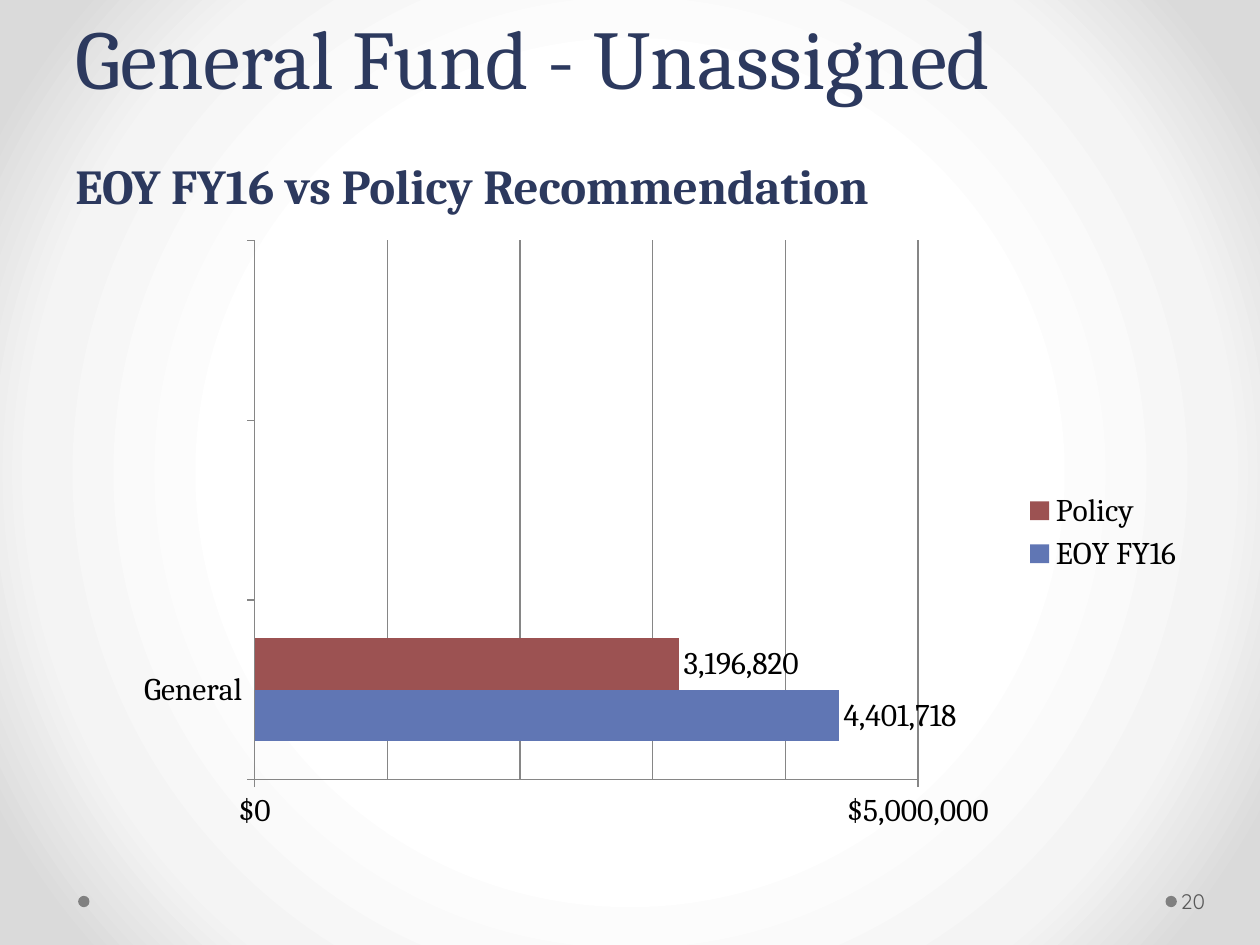
"""Build the General Fund slide: title, bar chart and page number."""
from copy import deepcopy
from pptx import Presentation
from pptx.chart.data import CategoryChartData as Data
from pptx.dml.color import RGBColor as Rgb
from pptx.enum.chart import XL_CHART_TYPE as Kind, XL_LABEL_POSITION as Spot
from pptx.enum.chart import XL_LEGEND_POSITION as Side, XL_TICK_MARK as Tick
from pptx.enum.shapes import MSO_SHAPE as Form
from pptx.enum.text import MSO_ANCHOR as Anchor
from pptx.oxml import parse_xml
from pptx.oxml.ns import nsdecls, qn
from pptx.util import Inches, Pt

SERIF = "Cambria"
NAVY, GRAY, LINE = "2C395E", "808080", "868686"
TITLE = [
    ("General Fund - Unassigned", dict(size=Pt(47.7), bold=False)),
    ("EOY FY16 vs Policy Recommendation", dict(size=Pt(27.9), bold=True)),
]
PAGE = "20"
CATS = ["General", "", ""]
BARS = [("EOY FY16", 4401718, "6076B4"), ("Policy ", 3196820, "9C5252")]
STOPS = [(50, "FFFFFF"), (76, "F4F4F4"), (92, "DADADA")]
PLOT = dict(x=0.169, y=0.032, w=0.585, h=0.865)
DOTS = [0.62, 9.25]
AXIS = dict(minimum_scale=0, maximum_scale=5000000, major_unit=5000000,
            minor_unit=1000000, has_major_gridlines=True,
            has_minor_gridlines=True)


def paint(fill, hue):
    fill.solid()
    fill.fore_color.rgb = Rgb.from_string(hue)


def style(item, **vals):
    for key, val in vals.items():
        setattr(item, key, val)


def ink(font, hue, **vals):
    style(font, **vals)
    paint(font.fill, hue)


def rule(line):
    line.width = Pt(0.75)
    paint(line.fill, LINE)


def box(slide, area, anchor, pads):
    frame = slide.shapes.add_textbox(*map(Inches, area)).text_frame
    style(frame, word_wrap=True, vertical_anchor=anchor)
    for side, pad in zip(("left", "top", "right", "bottom"), pads):
        setattr(frame, f"margin_{side}", Inches(pad))
    return frame.paragraphs[0]


def glow(slide):
    fill = slide.background.fill
    fill.gradient()
    stops = "".join(f'<a:gs pos="{pos * 1000}"><a:srgbClr val="{hue}"/></a:gs>'
                    for pos, hue in STOPS)
    grad = parse_xml(
        f'<a:gradFill {nsdecls("a")} rotWithShape="1"><a:gsLst>{stops}</a:gsLst>'
        '<a:path path="circle"><a:fillToRect l="50000" t="50000" r="50000" '
        'b="50000"/></a:path></a:gradFill>')
    old = slide.background._cSld.bg.bgPr.find(qn("a:gradFill"))
    old.getparent().replace(old, grad)


def head(slide):
    para = box(slide, (0.5, 0, 9, 1.75), Anchor.BOTTOM, (0.1, 0.05, 0.1, 0.05))
    para.line_spacing = Pt(62)
    for num, (text, look) in enumerate(TITLE):
        if num:
            para.add_line_break()
        run = para.add_run()
        run.text = text
        ink(run.font, NAVY, name=SERIF, **look)


def graph(slide):
    data = Data(number_format="#,##0")
    data.categories = CATS
    for name, val, hue in BARS:
        data.add_series(name, [val, None, None])
    area = map(Inches, (0.5, 1.75, 9, 4.95))
    chart = slide.shapes.add_chart(Kind.BAR_CLUSTERED, *area, data).chart
    style(chart, has_title=False, has_legend=True)
    ink(chart.font, "000000", name=SERIF, size=Pt(18))
    style(chart.legend, position=Side.RIGHT, include_in_layout=False)
    cat, val = chart.category_axis, chart.value_axis
    style(val, **AXIS)
    style(val.tick_labels, number_format='"$"#,##0',
          number_format_is_linked=False)
    for axis in (cat, val):
        style(axis, major_tick_mark=Tick.OUTSIDE, minor_tick_mark=Tick.NONE)
    for part in (cat, val, val.major_gridlines):
        rule(part.format.line)
    major, minor = (val._element.find(qn(f"c:{size}Gridlines"))
                    for size in ("major", "minor"))
    minor.append(deepcopy(major.find(qn("c:spPr"))))
    plot = chart.plots[0]
    style(plot, gap_width=150, overlap=0, vary_by_categories=False)
    for bar, (name, num, hue) in zip(plot.series, BARS):
        paint(bar.format.fill, hue)
        style(bar.data_labels, show_value=True, position=Spot.OUTSIDE_END,
              number_format="#,##0", number_format_is_linked=False)
    spots = "".join(f'<c:{key} val="{num}"/>' for key, num in PLOT.items())
    grid = parse_xml(
        f'<c:layout {nsdecls("c")}><c:manualLayout><c:layoutTarget val="inner"/>'
        f'<c:xMode val="edge"/><c:yMode val="edge"/>{spots}'
        '</c:manualLayout></c:layout>')
    zone = chart._chartSpace.chart.plotArea
    for old in zone.findall(qn("c:layout")):
        zone.remove(old)
    zone.insert(0, grid)


def foot(slide):
    for left in DOTS:
        dot = slide.shapes.add_shape(
            Form.OVAL, *map(Inches, (left, 7.11, 0.09, 0.09)))
        dot.shadow.inherit = False
        paint(dot.fill, GRAY)
        dot.line.fill.background()
    run = box(slide, (9.34, 6.95, 0.61, 0.4), Anchor.MIDDLE,
              (0.03, 0.05, 0.05, 0.05)).add_run()
    run.text = PAGE
    ink(run.font, "595959", name="Quicksand", size=Pt(12))


def main():
    deck = Presentation()
    style(deck, slide_width=Inches(10), slide_height=Inches(7.5))
    slide = deck.slides.add_slide(deck.slide_layouts[6])
    for step in (glow, head, graph, foot):
        step(slide)
    deck.save("out.pptx")


if __name__ == "__main__":
    main()
